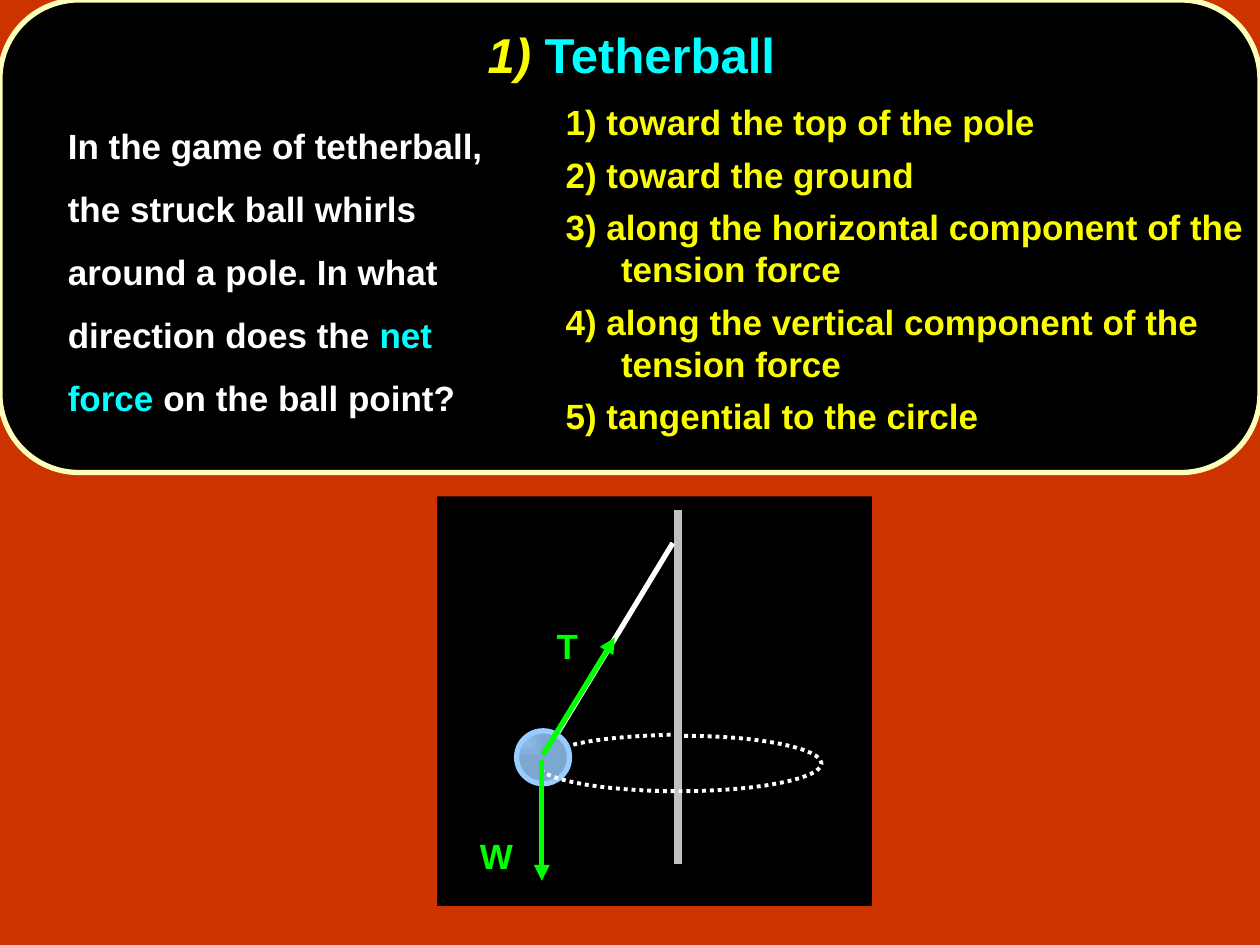
from pptx import Presentation
from pptx.dml.color import RGBColor
from pptx.enum.dml import MSO_LINE
from pptx.enum.shapes import MSO_CONNECTOR, MSO_SHAPE
from pptx.enum.text import MSO_ANCHOR, MSO_AUTO_SIZE, PP_ALIGN
from pptx.oxml import parse_xml
from pptx.oxml.ns import nsdecls
from pptx.util import Inches, Pt

HUES = {
    "back": "CC3300", "black": "000000", "white": "FFFFFF", "cream": "FCFEB9",
    "gold": "FAFD00", "cyan": "00FFFF", "green": "00FF00", "gray": "C0C0C0",
    "sky": "99CCFF", "steel": "7DA7D1",
}
FONT = {"name": "Arial", "bold": True}


def apply(target, values):
    for name, value in values.items():
        setattr(target, name, value)


def hue(name):
    return RGBColor.from_string(HUES[name])


def add_xml(parent, tag, inner="", attrs=""):
    parent.append(parse_xml(f"<a:{tag} {nsdecls('a')} {attrs}>{inner}</a:{tag}>"))


def curve(points, steps=12):
    """Sample a chain of cubic curves: a start, then three points per curve."""
    path = [points[0]]
    for i in range(0, len(points) - 1, 3):
        a, b, c, d = points[i:i + 4]
        for n in range(1, steps + 1):
            t = n / steps
            s = 1 - t
            path.append(tuple(
                s**3 * p + 3 * s * s * t * q + 3 * s * t * t * r + t**3 * u
                for p, q, r, u in zip(a, b, c, d)))
    return path


class Painter:
    def __init__(self, slide):
        self.slide = slide
        self.shapes = slide.shapes
        fill = slide.background.fill
        fill.solid()
        fill.fore_color.rgb = hue("back")

    def stroke(self, item, color, width):
        item.line.color.rgb = hue(color)
        item.line.width = Pt(width)

    def shape(self, kind, box, fill=None, line=None, width=3):
        item = self.shapes.add_shape(kind, *map(Inches, box))
        item.shadow.inherit = False
        if fill:
            item.fill.solid()
            item.fill.fore_color.rgb = hue(fill)
        if line:
            self.stroke(item, line, width)
        else:
            item.line.fill.background()
        return item

    def ball(self, box, inner, outer):
        item = self.shape(MSO_SHAPE.OVAL, box, line=inner)
        item.fill.gradient()
        for stop, color in zip(item.fill.gradient_stops, (inner, outer)):
            stop.color.rgb = hue(color)
        # Shade outward from the upper left corner
        grad = item.fill._xPr.gradFill
        grad.remove(grad.lin)
        add_xml(grad, "path", '<a:fillToRect r="100000" b="100000"/>', 'path="rect"')

    def line(self, start, end, color, width=3, arrow=False):
        item = self.shapes.add_connector(
            MSO_CONNECTOR.STRAIGHT, *map(Inches, (*start, *end)))
        self.stroke(item, color, width)
        if arrow:
            add_xml(item.line._get_or_add_ln(), "tailEnd", attrs='type="triangle"')
        add_xml(item._element.spPr, "effectLst")

    def dots(self, points):
        path = [(Inches(x), Inches(y)) for x, y in curve(points)]
        pen = self.shapes.build_freeform(*path[0], scale=1.0)
        pen.add_line_segments(path[1:], close=False)
        item = pen.convert_to_shape()
        item.shadow.inherit = False
        item.fill.background()
        self.stroke(item, "white", 2.25)
        item.line.dash_style = MSO_LINE.ROUND_DOT

    def text(self, box, paras, size=20, frame=None, para=None, left=0, hang=0):
        """Each paragraph is a list of (text, color, italic) runs."""
        area = self.shapes.add_textbox(*map(Inches, box)).text_frame
        apply(area, {"word_wrap": True, **(frame or {})})
        for i, runs in enumerate(paras):
            block = area.add_paragraph() if i else area.paragraphs[0]
            apply(block, para or {})
            props = block._p.get_or_add_pPr()
            props.set("marL", str(Inches(left)))
            props.set("indent", str(Inches(hang)))
            for words, color, slant in runs:
                run = block.add_run()
                run.text = words
                apply(run.font, {**FONT, "size": Pt(size), "italic": slant})
                run.font.color.rgb = hue(color)


def main():
    deck = Presentation()
    apply(deck, {"slide_width": Inches(10), "slide_height": Inches(7.5)})
    art = Painter(deck.slides.add_slide(deck.slide_layouts[6]))

    # Question panel and title
    art.shape(MSO_SHAPE.ROUNDED_RECTANGLE, (0, 0, 10, 3.75), "black", "cream")
    art.text((1.02, 0, 7.98, 0.92),
             [[("1) ", "gold", True), ("Tetherball", "cyan", False)]], 28,
             {"vertical_anchor": MSO_ANCHOR.MIDDLE},
             {"alignment": PP_ALIGN.CENTER, "line_spacing": 0.9})

    # Answers
    choices = [
        "toward the top of the pole",
        "toward the ground",
        "along the horizontal component of the tension force",
        "along the vertical component of the tension force",
        "tangential to the circle",
    ]
    art.text((4.39, 0.75, 5.61, 2.93),
             [[(f"{n}) {words}", "gold", False)] for n, words in enumerate(choices, 1)],
             para={"space_before": Pt(6)}, left=0.44, hang=-0.44)

    # Question
    art.text((0, 0.73, 3.96, 2.82),
             [[("In the game of tetherball, the struck ball whirls around a pole. "
                "In what direction does the ", "white", False),
               ("net force", "cyan", False),
               (" on the ball point?", "white", False)]],
             frame={"margin_top": Inches(0.09)},
             para={"line_spacing": 1.5, "space_before": Pt(10)}, left=0.44)

    # Diagram: pole, rope and ball
    art.shape(MSO_SHAPE.RECTANGLE, (3.47, 3.94, 3.45, 3.25), "black")
    art.line((5.38, 4.05), (5.38, 6.86), "gray", 4.5)
    art.line((5.34, 4.31), (4.43, 5.81), "white")
    art.ball((4.1, 5.8, 0.42, 0.42), "sky", "steel")

    # Dotted orbit, front and back
    art.dots([(5.43, 5.84), (6.03, 5.84), (6.52, 5.94), (6.52, 6.06),
              (6.52, 6.18), (6.01, 6.28), (5.39, 6.28),
              (4.82, 6.28), (4.34, 6.2), (4.27, 6.09)])
    art.dots([(4.55, 5.91), (4.75, 5.86), (5.04, 5.84), (5.35, 5.83)])

    # Forces and their labels
    art.line((4.31, 5.99), (4.88, 5.06), "green", arrow=True)
    art.line((4.3, 6.03), (4.3, 6.99), "green", arrow=True)
    for label, box in (("W", (3.71, 6.57, 0.46, 0.43)), ("T", (4.32, 4.91, 0.37, 0.43))):
        art.text(box, [[(label, "green", False)]],
                 frame={"word_wrap": False, "auto_size": MSO_AUTO_SIZE.SHAPE_TO_FIT_TEXT})

    deck.save("out.pptx")


if __name__ == "__main__":
    main()
